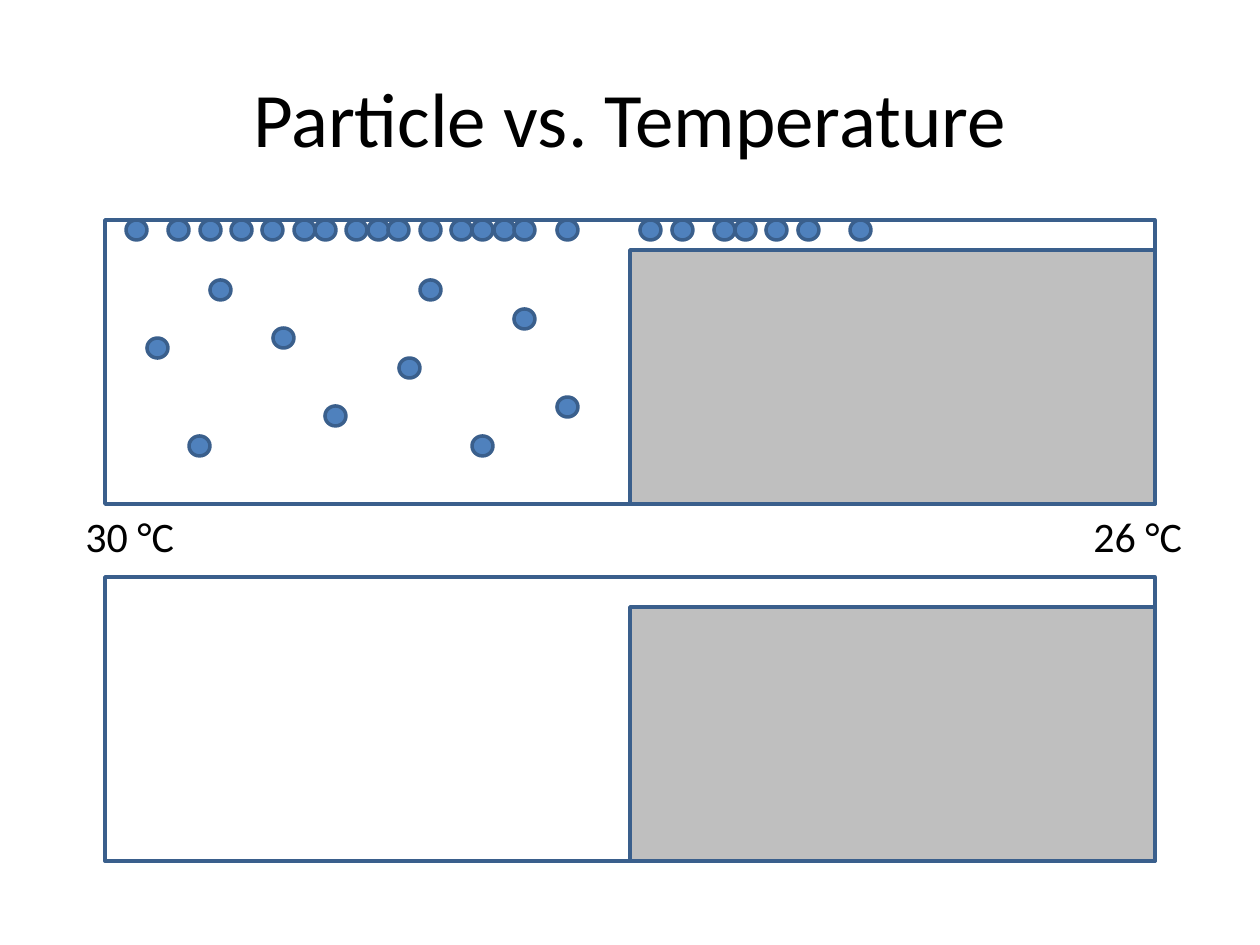
import pptx
import pptx.dml.color
import pptx.enum.shapes
import pptx.enum.text
import pptx.util

PX = 914400 // 126  # EMU per pixel
FONT = "Calibri"
OUTLINE, WATER, BLOCK, PARTICLE, INK = "3A5F8C", "FFFFFF", "BFBFBF", "4F81BD", "000000"

CHAMBER_LEFT, CHAMBER_WIDTH, CHAMBER_HEIGHT = 105, 1050, 284
TOP_CHAMBER, BOTTOM_CHAMBER = 220, 577
SHELF_DEPTH = 30  # gap between the chamber's top and the block

# Left edges of the particles along the surface
SURFACE = [126, 168, 200, 231, 262, 294, 315, 346, 368, 388, 420, 451,
           472, 494, 514, 557, 640, 672, 714, 735, 766, 798, 850]
# Left and top of the particles suspended below it
SUSPENDED = [(147, 338), (189, 436), (210, 280), (273, 328), (325, 406),
             (399, 358), (420, 280), (472, 436), (514, 309), (557, 397)]


def px(*lengths):
    return [pptx.util.Emu(length * PX) for length in lengths]


def color(hex_value):
    return pptx.dml.color.RGBColor.from_string(hex_value)


def style_text(frame, text, size):
    frame.text = text
    font = frame.paragraphs[0].runs[0].font
    font.name, font.size = FONT, pptx.util.Pt(size)
    font.color.rgb = color(INK)


def add_title(slide, text):
    title = slide.shapes.title
    title.left, title.top, title.width, title.height = px(63, 38, 1134, 157)
    style_text(title.text_frame, text, 44)
    title.text_frame.vertical_anchor = pptx.enum.text.MSO_ANCHOR.MIDDLE
    title.text_frame.paragraphs[0].alignment = pptx.enum.text.PP_ALIGN.CENTER


def add_temperature(slide, left, text):
    label = slide.shapes.add_textbox(*px(left, 504, 116, 63)).text_frame
    label.word_wrap = False
    label.auto_size = pptx.enum.text.MSO_AUTO_SIZE.SHAPE_TO_FIT_TEXT
    style_text(label, text, 24)


def add_outlined(group, kind, box, fill):
    outlined = group.shapes.add_shape(kind, *px(*box))
    outlined.shadow.inherit = False
    outlined.fill.solid()
    outlined.fill.fore_color.rgb = color(fill)
    outlined.line.color.rgb = color(OUTLINE)
    outlined.line.width = pptx.util.Pt(2)


def add_chamber(slide, top):
    chamber = slide.shapes.add_group_shape()
    rectangle = pptx.enum.shapes.MSO_SHAPE.RECTANGLE
    half = CHAMBER_WIDTH // 2
    add_outlined(chamber, rectangle,
                 (CHAMBER_LEFT, top, CHAMBER_WIDTH, CHAMBER_HEIGHT), WATER)
    add_outlined(chamber, rectangle,
                 (CHAMBER_LEFT + half, top + SHELF_DEPTH, half,
                  CHAMBER_HEIGHT - SHELF_DEPTH), BLOCK)
    return chamber


def add_particles(chamber, positions):
    for left, top in positions:
        add_outlined(chamber, pptx.enum.shapes.MSO_SHAPE.OVAL,
                     (left, top, 21, 20), PARTICLE)


def main():
    deck = pptx.Presentation()
    deck.slide_width, deck.slide_height = pptx.util.Inches(10), pptx.util.Inches(7.5)
    slide = deck.slides.add_slide(deck.slide_layouts[5])

    # Title and temperatures at the two ends
    add_title(slide, "Particle vs. Temperature")
    add_temperature(slide, 73, "30 °C")
    add_temperature(slide, 1081, "26 °C")

    # Chamber with particles, then the empty one
    filled = add_chamber(slide, TOP_CHAMBER)
    add_particles(filled, [(left, TOP_CHAMBER) for left in SURFACE])
    add_particles(filled, SUSPENDED)
    add_chamber(slide, BOTTOM_CHAMBER)

    deck.save("out.pptx")


if __name__ == "__main__":
    main()
